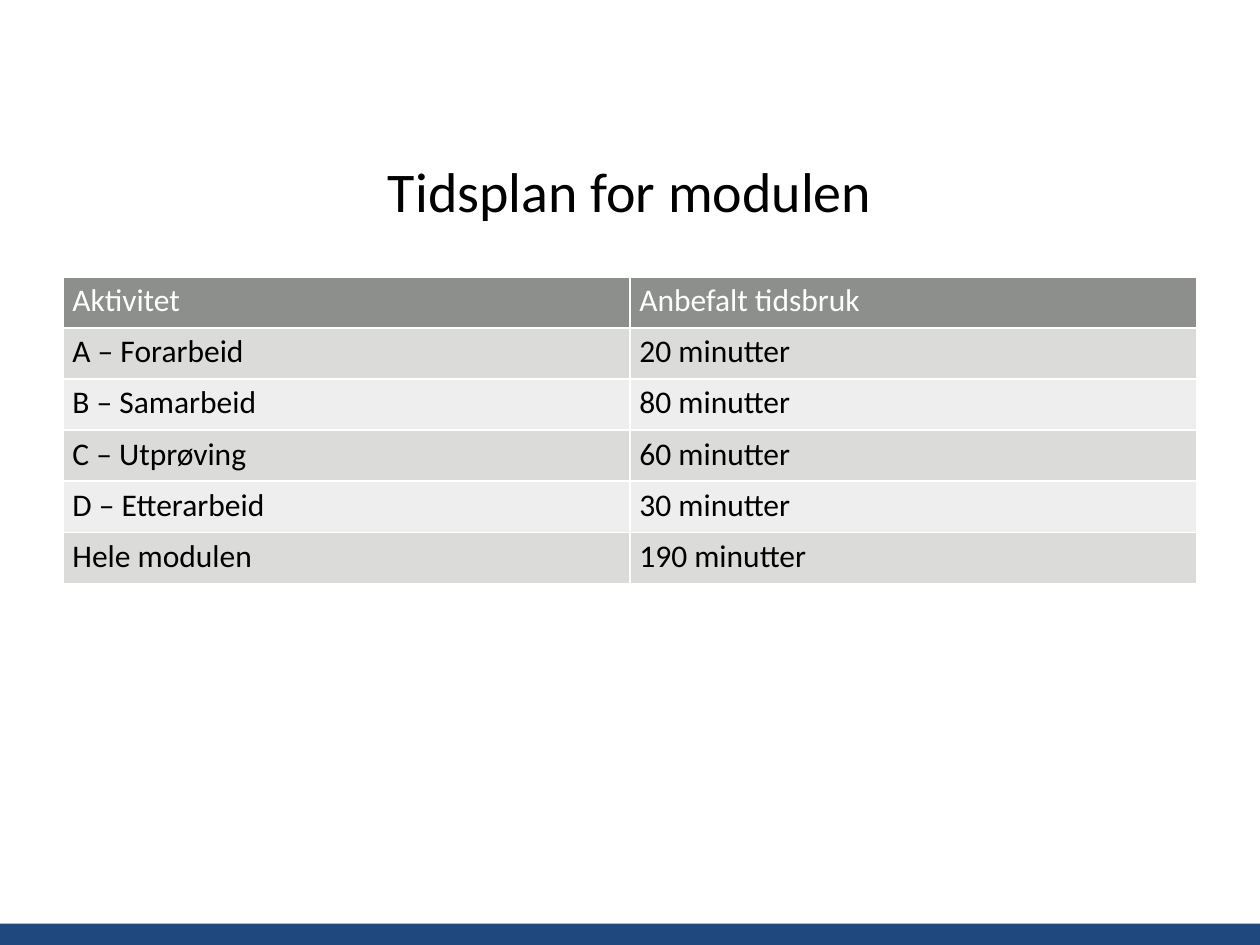
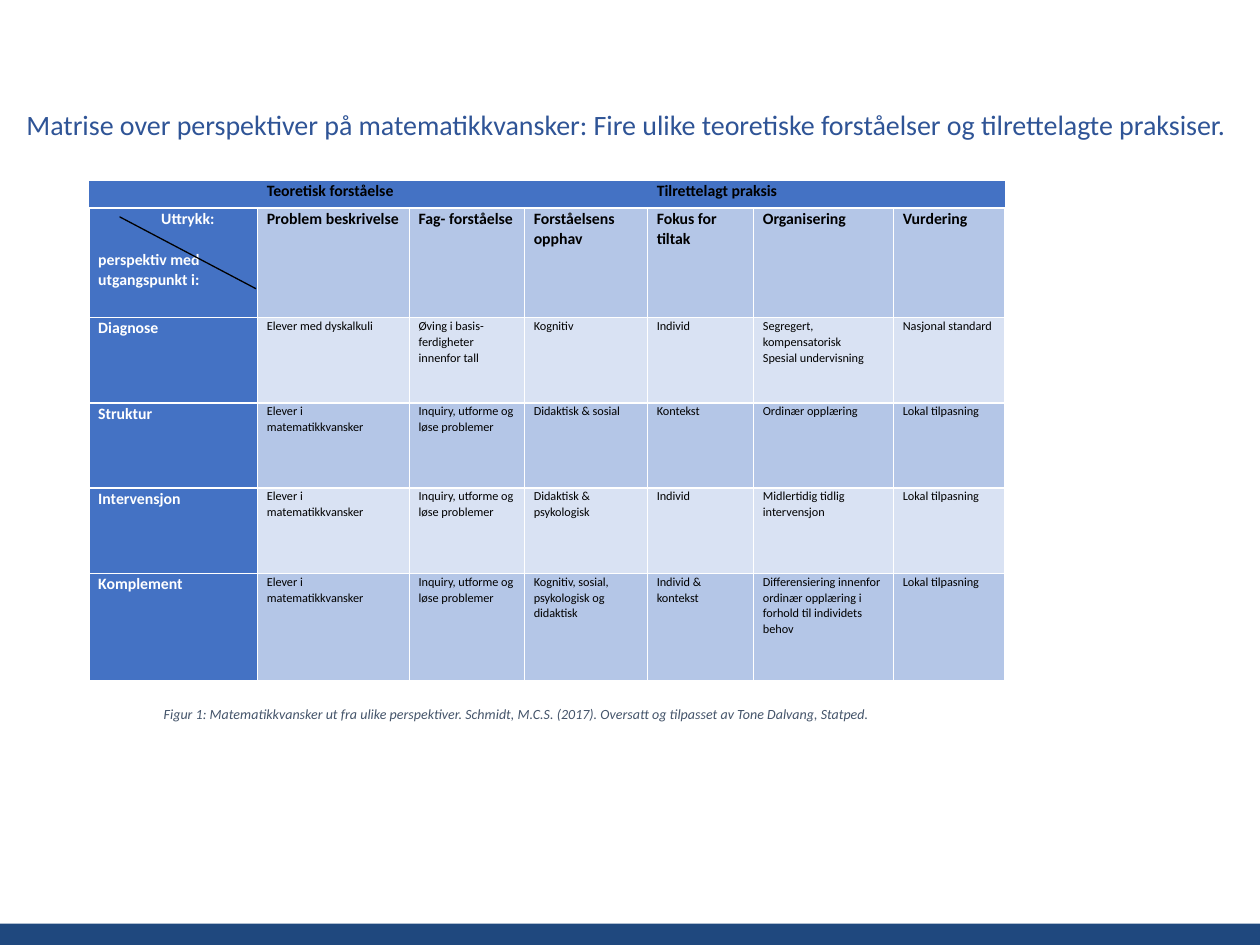
import lxml.etree
import pptx
import pptx.dml.color
import pptx.enum.shapes
import pptx.enum.text
import pptx.oxml.ns
import pptx.util

Cm = pptx.util.Cm
Pt = pptx.util.Pt
RGBColor = pptx.dml.color.RGBColor
Align = pptx.enum.text.PP_ALIGN
Anchor = pptx.enum.text.MSO_ANCHOR
qn = pptx.oxml.ns.qn

# Shared look
FONT = "Calibri"
BLACK = RGBColor(0x00, 0x00, 0x00)
WHITE = RGBColor(0xFF, 0xFF, 0xFF)
BAND_BLUE = RGBColor(0x1F, 0x48, 0x7E)
TITLE_BLUE = RGBColor(0x2F, 0x54, 0x96)
CAPTION_GREY = RGBColor(0x44, 0x54, 0x6A)
HEADER_GREY = RGBColor(0x8D, 0x8F, 0x8C)
GREYS = [RGBColor(0xDB, 0xDB, 0xDA), RGBColor(0xEE, 0xEE, 0xEE)]
HEADER_BLUE = RGBColor(0x44, 0x72, 0xC4)
BLUES = [RGBColor(0xB4, 0xC6, 0xE7), RGBColor(0xD9, 0xE2, 0xF3)]
SLIDE_WIDTH, SLIDE_HEIGHT = Cm(25.4), Cm(19.05)
BAND_HEIGHT = Cm(0.43)
TITLE_ONLY = 5

# Content
SCHEDULE = [
    ("Aktivitet", "Anbefalt tidsbruk"),
    ("A – Forarbeid", "20 minutter"),
    ("B – Samarbeid", "80 minutter"),
    ("C – Utprøving", "60 minutter"),
    ("D – Etterarbeid", "30 minutter"),
    ("Hele modulen", "190 minutter"),
]
MATRIX = [
    ("", "Teoretisk forståelse", "", "", "Tilrettelagt praksis", "", ""),
    ("Uttrykk:\nperspektiv med utgangspunkt i:", "Problem beskrivelse",
     "Fag- forståelse", "Forståelsens opphav", "Fokus for tiltak",
     "Organisering", "Vurdering"),
    ("Diagnose", "Elever med dyskalkuli",
     "Øving i basis- ferdigheter innenfor tall", "Kognitiv", "Individ",
     "Segregert, kompensatorisk\nSpesial undervisning", "Nasjonal standard"),
    ("Struktur", "Elever i matematikkvansker",
     "Inquiry, utforme og løse problemer", "Didaktisk & sosial", "Kontekst",
     "Ordinær opplæring", "Lokal tilpasning"),
    ("Intervensjon", "Elever i matematikkvansker",
     "Inquiry, utforme og løse problemer", "Didaktisk & psykologisk",
     "Individ", "Midlertidig tidlig intervensjon", "Lokal tilpasning"),
    ("Komplement", "Elever i matematikkvansker",
     "Inquiry, utforme og løse problemer",
     "Kognitiv, sosial, psykologisk og didaktisk", "Individ & kontekst",
     "Differensiering innenfor ordinær opplæring i forhold til individets behov",
     "Lokal tilpasning"),
]
MATRIX_WIDTHS = [3.4, 3.06, 2.32, 2.48, 2.14, 2.82, 2.25]
MATRIX_HEIGHTS = [0.56, 2.21, 1.72, 1.72, 1.72, 2.16]


def write_text(frame, text, *, size, color=BLACK, bold=False, italic=False,
               align=Align.LEFT, line_spacing=1.0):
    """Fill a text frame, one paragraph for each line of text."""
    for index, line in enumerate(text.split("\n")):
        para = frame.paragraphs[0] if index == 0 else frame.add_paragraph()
        para.alignment = align
        para.line_spacing = line_spacing
        para.space_before = para.space_after = Pt(0)
        if not line:
            # Keeps an empty cell from making its row taller
            para._p.get_or_add_endParaRPr().set("sz", str(size * 100))
            continue
        span = para.add_run()
        span.text = line
        span.font.name = FONT
        span.font.size = Pt(size)
        span.font.bold = bold
        span.font.italic = italic
        span.font.color.rgb = color


def add_page(deck):
    """Add a title-only slide with the blue band at its foot."""
    page = deck.slides.add_slide(deck.slide_layouts[TITLE_ONLY])
    band = page.shapes.add_shape(
        pptx.enum.shapes.MSO_SHAPE.RECTANGLE,
        0, SLIDE_HEIGHT - BAND_HEIGHT, SLIDE_WIDTH, BAND_HEIGHT)
    band.shadow.inherit = False
    band.fill.solid()
    band.fill.fore_color.rgb = BAND_BLUE
    band.line.fill.background()
    return page


def set_title(page, text, left, top, width, height, *, anchor=Anchor.MIDDLE,
              margin_top=0.13, **text_format):
    title = page.shapes.title
    title.left, title.top = Cm(left), Cm(top)
    title.width, title.height = Cm(width), Cm(height)
    frame = title.text_frame
    frame.word_wrap = True
    frame.auto_size = pptx.enum.text.MSO_AUTO_SIZE.NONE
    frame.vertical_anchor = anchor
    frame.margin_top = Cm(margin_top)
    write_text(frame, text, **text_format)


def set_borders(cell, sides):
    """Draw white borders on the named sides and clear the others."""
    properties = cell._tc.get_or_add_tcPr()
    for side in "LRTB":
        line = lxml.etree.SubElement(properties, qn(f"a:ln{side}"), w=str(Pt(1)))
        if side in sides:
            fill = lxml.etree.SubElement(line, qn("a:solidFill"))
            lxml.etree.SubElement(fill, qn("a:srgbClr"), val=str(WHITE))
        else:
            lxml.etree.SubElement(line, qn("a:noFill"))


def add_table(page, left, top, widths, heights):
    """Add an unstyled table; widths and heights are in centimetres."""
    table = page.shapes.add_table(
        len(heights), len(widths), Cm(left), Cm(top),
        Cm(sum(widths)), Cm(sum(heights))).table
    table.first_row = table.horz_banding = False
    for column, width in zip(table.columns, widths):
        column.width = Cm(width)
    for row, height in zip(table.rows, heights):
        row.height = Cm(height)
    return table


def fill_cell(cell, text, fill, *, sides="LRTB", margin_y=0, **text_format):
    cell.margin_left = cell.margin_right = Cm(0.19)
    cell.margin_top = cell.margin_bottom = Cm(margin_y)
    set_borders(cell, sides)
    cell.fill.solid()
    cell.fill.fore_color.rgb = fill
    write_text(cell.text_frame, text, **text_format)


def add_schedule(page):
    table = add_table(page, 1.27, 5.58, [11.43] * 2, [1.03] * len(SCHEDULE))
    for row, texts in enumerate(SCHEDULE):
        header = row == 0
        for column, text in enumerate(texts):
            fill_cell(table.cell(row, column), text,
                      HEADER_GREY if header else GREYS[(row - 1) % 2],
                      margin_y=0.1, size=18, color=WHITE if header else BLACK)


def add_matrix(page):
    table = add_table(page, 1.79, 3.63, MATRIX_WIDTHS, MATRIX_HEIGHTS)
    for row, texts in enumerate(MATRIX):
        for column, text in enumerate(texts):
            heading = row < 2 or column == 0
            dark = row == 0 or column == 0
            fill_cell(table.cell(row, column), text,
                      HEADER_BLUE if dark else BLUES[(row - 1) % 2],
                      sides="TB" if row == 0 else "LRTB",
                      size=9 if heading else 7, bold=heading,
                      color=WHITE if column == 0 else BLACK,
                      line_spacing=1.07)

    # Group headings span three columns each
    for first in (1, 4):
        table.cell(0, first).merge(table.cell(0, first + 2))

    # Corner cell: upper label to the right, lower label one line further down
    upper, lower = table.cell(1, 0).text_frame.paragraphs
    upper._p.get_or_add_pPr().set("marL", str(Cm(1.27)))
    lower.space_before = Pt(11.75)


def add_line(page, start, end):
    line = page.shapes.add_connector(
        pptx.enum.shapes.MSO_CONNECTOR.STRAIGHT,
        *[Cm(value) for value in start + end])
    line.line.color.rgb = BLACK
    line.line.width = Pt(0.75)
    lxml.etree.SubElement(line._element.spPr, qn("a:effectLst"))


def add_caption(page, text, left, top, width, height):
    box = page.shapes.add_textbox(Cm(left), Cm(top), Cm(width), Cm(height))
    box.text_frame.word_wrap = False
    write_text(box.text_frame, text, size=8, color=CAPTION_GREY, italic=True)


def main():
    deck = pptx.Presentation()
    deck.slide_width, deck.slide_height = SLIDE_WIDTH, SLIDE_HEIGHT

    # Schedule
    page = add_page(deck)
    set_title(page, "Tidsplan for modulen", 1.27, 2.54, 22.86, 2.57,
              size=32, align=Align.CENTER)
    add_schedule(page)

    # Matrix of perspectives
    page = add_page(deck)
    set_title(page, "Matrise over perspektiver på matematikkvansker: "
              "Fire ulike teoretiske forståelser og tilrettelagte praksiser.",
              0.28, 1.73, 25.4, 1.88, anchor=Anchor.TOP, margin_top=0.43,
              size=16, color=TITLE_BLUE)
    add_matrix(page)
    add_line(page, (2.41, 4.37), (5.16, 5.82))
    add_caption(page, "Figur 1: Matematikkvansker ut fra ulike perspektiver. "
                "Schmidt, M.C.S. (2017). Oversatt og tilpasset av "
                "Tone Dalvang, Statped.", 3.05, 14.1, 14.91, 1.37)

    deck.save("out.pptx")


if __name__ == "__main__":
    main()
